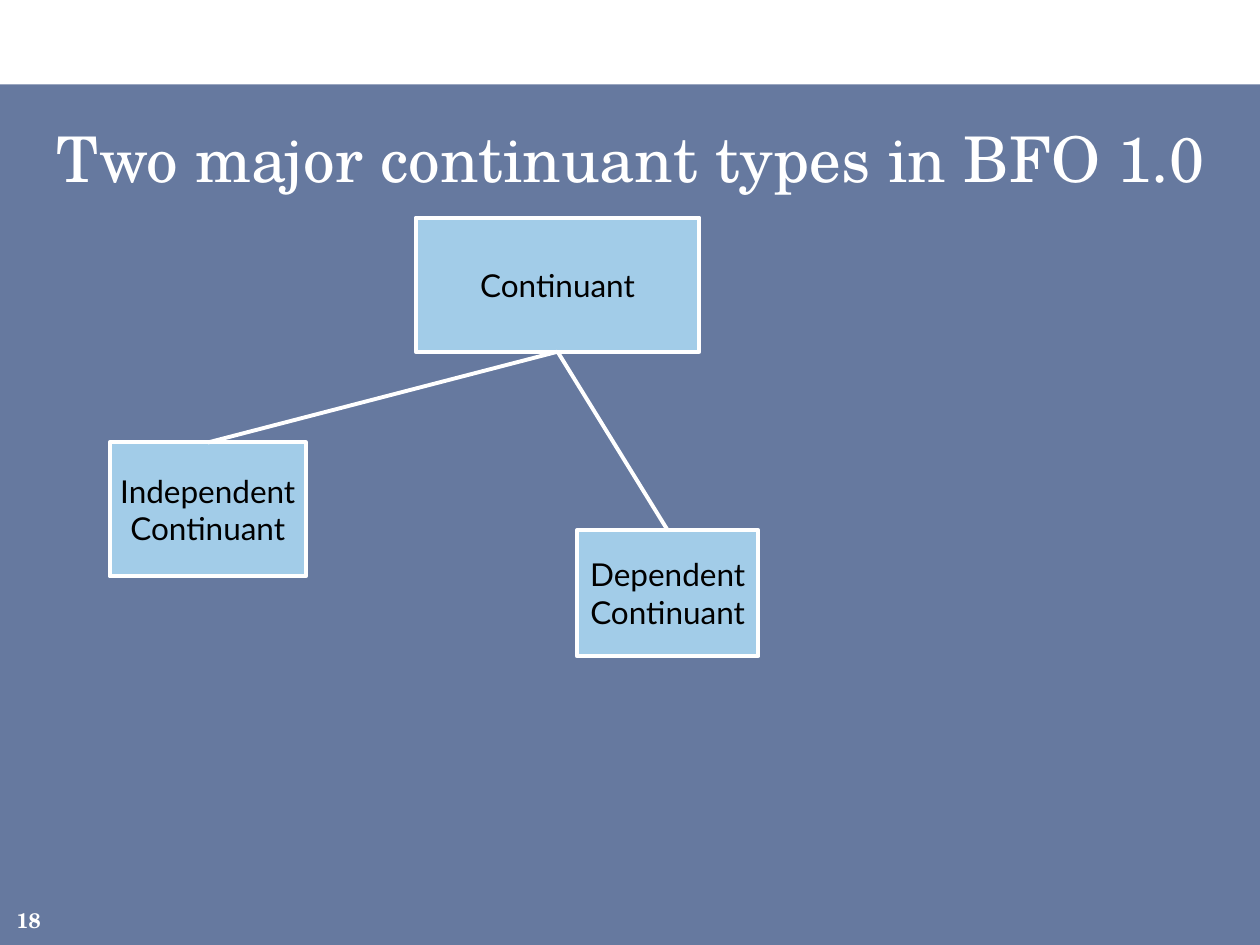
from lxml.etree import SubElement
from pptx import Presentation
from pptx.dml.color import RGBColor
from pptx.enum.shapes import MSO_CONNECTOR, MSO_SHAPE
from pptx.enum.text import MSO_ANCHOR, PP_ALIGN
from pptx.oxml.ns import qn
from pptx.util import Cm, Pt

COLORS = {"panel": "002060", "box": "A2CCE8", "light": "FFFFFF", "dark": "000000"}
SERIF, SANS = "TeX Gyre Schola", "Lato"
WIDTH, HEIGHT = 25.4, 19.05
TOP, BOTTOM = 0, 2  # connection sites of a rectangle


def color(name):
    return RGBColor.from_string(COLORS[name])


class Deck:
    """Holds the line style and the current slide."""

    def __init__(self):
        self.prs = Presentation()
        self.prs.slide_width, self.prs.slide_height = Cm(WIDTH), Cm(HEIGHT)
        self.slide = self.prs.slides.add_slide(self.prs.slide_layouts[5])
        self.shapes = self.slide.shapes
        self.line = Pt(2.25)

    def label(self, shape, lines, font, size, tone, align=PP_ALIGN.CENTER,
              bold=False, wrap=True):
        frame = shape.text_frame
        frame.word_wrap = wrap
        frame.vertical_anchor = MSO_ANCHOR.MIDDLE
        for i, text in enumerate(lines):
            para = frame.add_paragraph() if i else frame.paragraphs[0]
            para.alignment = align
            run = para.add_run()
            run.text = text
            run.font.name, run.font.size, run.font.bold = font, Pt(size), bold
            run.font.color.rgb = color(tone)

    def rect(self, place, fill):
        shape = self.shapes.add_shape(MSO_SHAPE.RECTANGLE, *map(Cm, place))
        shape.shadow.inherit = False
        shape.fill.solid()
        shape.fill.fore_color.rgb = color(fill)
        return shape

    def panel(self, top):
        """Add the translucent backdrop, behind all else."""
        shape = self.rect((0, top, WIDTH, HEIGHT - top), "panel")
        shape.line.fill.background()
        tint = shape._element.spPr.find(".//" + qn("a:srgbClr"))
        SubElement(tint, qn("a:alpha"), val="60000")
        self.shapes.title._element.addprevious(shape._element)

    def title(self, place, text):
        shape = self.shapes.title
        shape.left, shape.top, shape.width, shape.height = map(Cm, place)
        self.label(shape, [text], SERIF, 36, "light")

    def number(self, place, text):
        shape = self.shapes.add_textbox(*map(Cm, place))
        self.label(shape, [text], SERIF, 12, "light", PP_ALIGN.RIGHT, bold=True)

    def box(self, place, *lines):
        shape = self.rect(place, "box")
        shape.line.color.rgb = color("light")
        shape.line.width = self.line
        self.label(shape, lines, SANS, 18, "dark", wrap=False)
        return shape

    def link(self, parent, child):
        line = self.shapes.add_connector(MSO_CONNECTOR.STRAIGHT, 0, 0, 0, 0)
        line.begin_connect(parent, BOTTOM)
        line.end_connect(child, TOP)
        line.line.color.rgb = color("light")
        line.line.width = self.line
        SubElement(line._element.spPr, qn("a:effectLst"))


def main():
    deck = Deck()
    deck.panel(1.7)
    deck.title((0.64, 2.11, 24.13, 2.11), "Two major continuant types in BFO 1.0")
    deck.number((-0.2, 18.03, 1.27, 1.02), "18")
    root = deck.box((8.38, 4.39, 5.72, 2.7), "Continuant")
    kinds = [
        deck.box((2.21, 8.92, 3.96, 2.7), "Independent", "Continuant"),
        deck.box((11.63, 10.69, 3.66, 2.54), "Dependent", "Continuant"),
    ]
    for kind in kinds:
        deck.link(root, kind)
    deck.prs.save("out.pptx")


if __name__ == "__main__":
    main()
